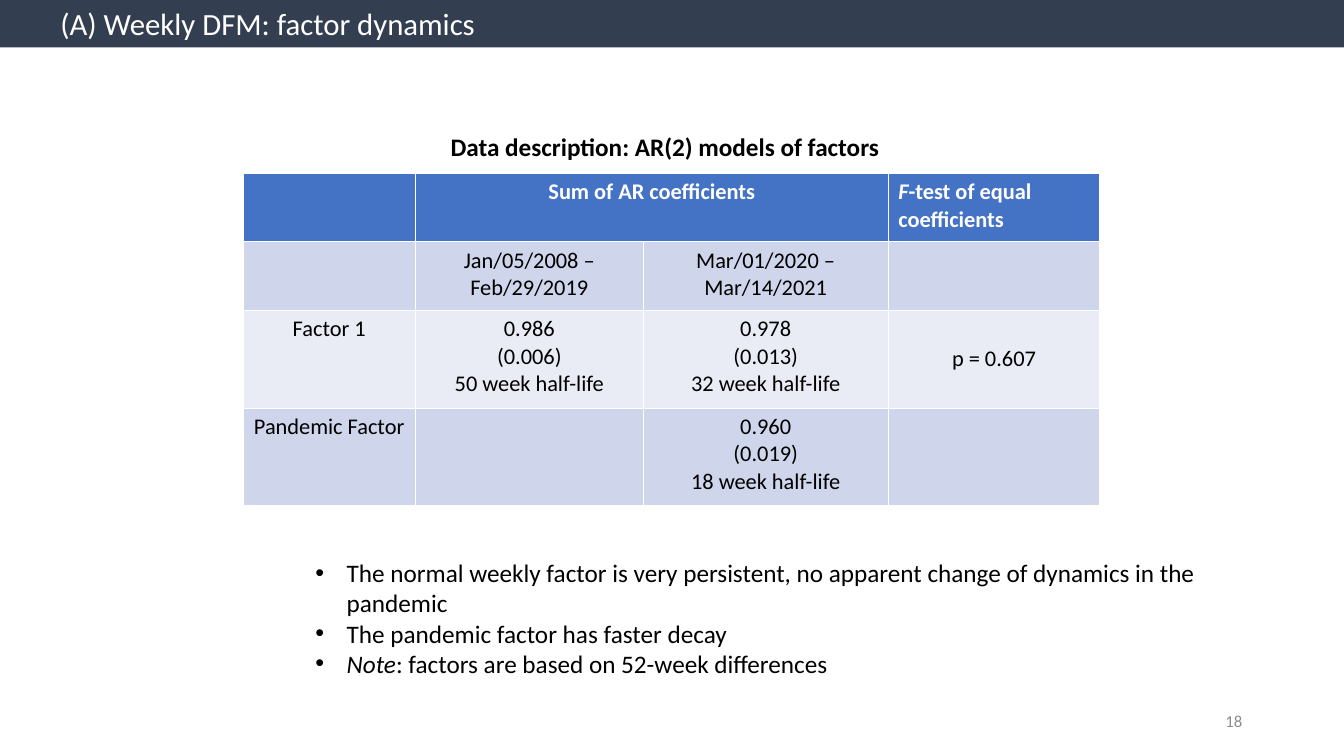
import pptx
import pptx.dml.color
import pptx.enum.shapes
import pptx.enum.text
import pptx.oxml
import pptx.oxml.ns
import pptx.util

ALIGN = pptx.enum.text.PP_ALIGN
ANCHOR = pptx.enum.text.MSO_ANCHOR

TITLE = "(A) Weekly DFM: factor dynamics"
CAPTION = "Data description: AR(2) models of factors"
PAGE_NUMBER = "18"
FACTOR_ROWS = [
    ["", "Sum of AR coefficients", "", [("F", True), ("-test of equal coefficients", False)]],
    ["", "Jan/05/2008 – Feb/29/2019", "Mar/01/2020 – Mar/14/2021", ""],
    ["Factor 1", "0.986\n(0.006)\n50 week half-life", "0.978\n(0.013)\n32 week half-life", "p = 0.607"],
    ["Pandemic Factor", "", "0.960\n(0.019)\n18 week half-life", ""],
]
FINDINGS = [
    "The normal weekly factor is very persistent, no apparent change of dynamics in the pandemic",
    "The pandemic factor has faster decay",
    [("Note", True), (": factors are based on 52-week differences", False)],
]

SLIDE_WIDTH, SLIDE_HEIGHT = 13.33, 7.5
PLACES = {
    "title": (0, 0, 100, 6.27),
    "caption": (32.78, 16.67, 50.04, 5.33),
    "factors": (18.08, 22.93, 63.76, 44),
    "findings": (22.73, 73.07, 67.29, 17.47),
    "page": (70.67, 92.67, 22.5, 5.33),
}
COLUMN_SHARES = [12.83, 16.95, 18.23, 15.75]
ROW_SHARES = [9.07, 9.07, 12.93, 12.93]
ROW_FILLS = ["4472C4", "CFD5EA", "E9EBF5", "CFD5EA"]


def color(value):
    return pptx.dml.color.RGBColor.from_string(value)


def across(share):
    return pptx.util.Inches(SLIDE_WIDTH * share / 100)


def down(share):
    return pptx.util.Inches(SLIDE_HEIGHT * share / 100)


def place(part):
    left, top, width, height = PLACES[part]
    return across(left), down(top), across(width), down(height)


def paint(target, value):
    target.fill.solid()
    target.fill.fore_color.rgb = color(value)


def write(frame, lines, size, ink, align=ALIGN.LEFT, bold=False):
    frame.word_wrap = True
    for index, line in enumerate(lines):
        paragraph = frame.paragraphs[0] if index == 0 else frame.add_paragraph()
        paragraph.alignment = align
        pieces = [(line, False)] if isinstance(line, str) else line
        for words, italic in pieces:
            run = paragraph.add_run()
            run.text = words
            look = {"name": "Calibri", "size": pptx.util.Pt(size), "bold": bold, "italic": italic}
            for key, value in look.items():
                setattr(run.font, key, value)
            run.font.color.rgb = color(ink)


def indent(paragraph, margin, first=0.0, bullet=None):
    settings = paragraph._p.get_or_add_pPr()
    settings.set("marL", str(pptx.util.Inches(margin)))
    settings.set("indent", str(pptx.util.Inches(first)))
    if bullet:
        namespace = pptx.oxml.ns.nsdecls("a")
        for xml in (f'<a:buFont {namespace} typeface="Arial"/>', f'<a:buChar {namespace} char="{bullet}"/>'):
            settings.append(pptx.oxml.parse_xml(xml))


def add_title(slide):
    bar = slide.shapes.add_shape(pptx.enum.shapes.MSO_SHAPE.RECTANGLE, *place("title"))
    bar.shadow.inherit = False
    paint(bar, "333F50")
    bar.line.fill.background()
    write(bar.text_frame, [TITLE], 22, "FFFFFF")
    indent(bar.text_frame.paragraphs[0], 0.5)


def add_factors(slide):
    table = slide.shapes.add_table(len(FACTOR_ROWS), len(COLUMN_SHARES), *place("factors")).table
    for column, share in zip(table.columns, COLUMN_SHARES):
        column.width = across(share)
    for row, share in zip(table.rows, ROW_SHARES):
        row.height = down(share)
    table.cell(0, 1).merge(table.cell(0, 2))
    for r, entries in enumerate(FACTOR_ROWS):
        for c, entry in enumerate(entries):
            cell = table.cell(r, c)
            paint(cell, ROW_FILLS[r])
            if not entry:
                continue
            lines = entry.split("\n") if isinstance(entry, str) else [entry]
            align = ALIGN.CENTER if isinstance(entry, str) else ALIGN.LEFT
            write(cell.text_frame, lines, 16, "FFFFFF" if r == 0 else "000000", align, r == 0)
    table.cell(2, 3).vertical_anchor = ANCHOR.MIDDLE


def add_text(slide, part, lines, size, ink, **look):
    frame = slide.shapes.add_textbox(*place(part)).text_frame
    write(frame, lines, size, ink, **look)
    return frame


def main():
    deck = pptx.Presentation()
    deck.slide_width, deck.slide_height = across(100), down(100)
    slide = deck.slides.add_slide(deck.slide_layouts[6])
    page = add_text(slide, "page", [PAGE_NUMBER], 12, "8C8C8C", align=ALIGN.RIGHT)
    page.vertical_anchor = ANCHOR.MIDDLE
    add_title(slide)
    add_factors(slide)
    add_text(slide, "caption", [CAPTION], 18, "000000", bold=True)
    findings = add_text(slide, "findings", FINDINGS, 18, "000000")
    for paragraph in findings.paragraphs:
        indent(paragraph, 0.31, -0.31, "•")
    deck.save("out.pptx")


if __name__ == "__main__":
    main()
